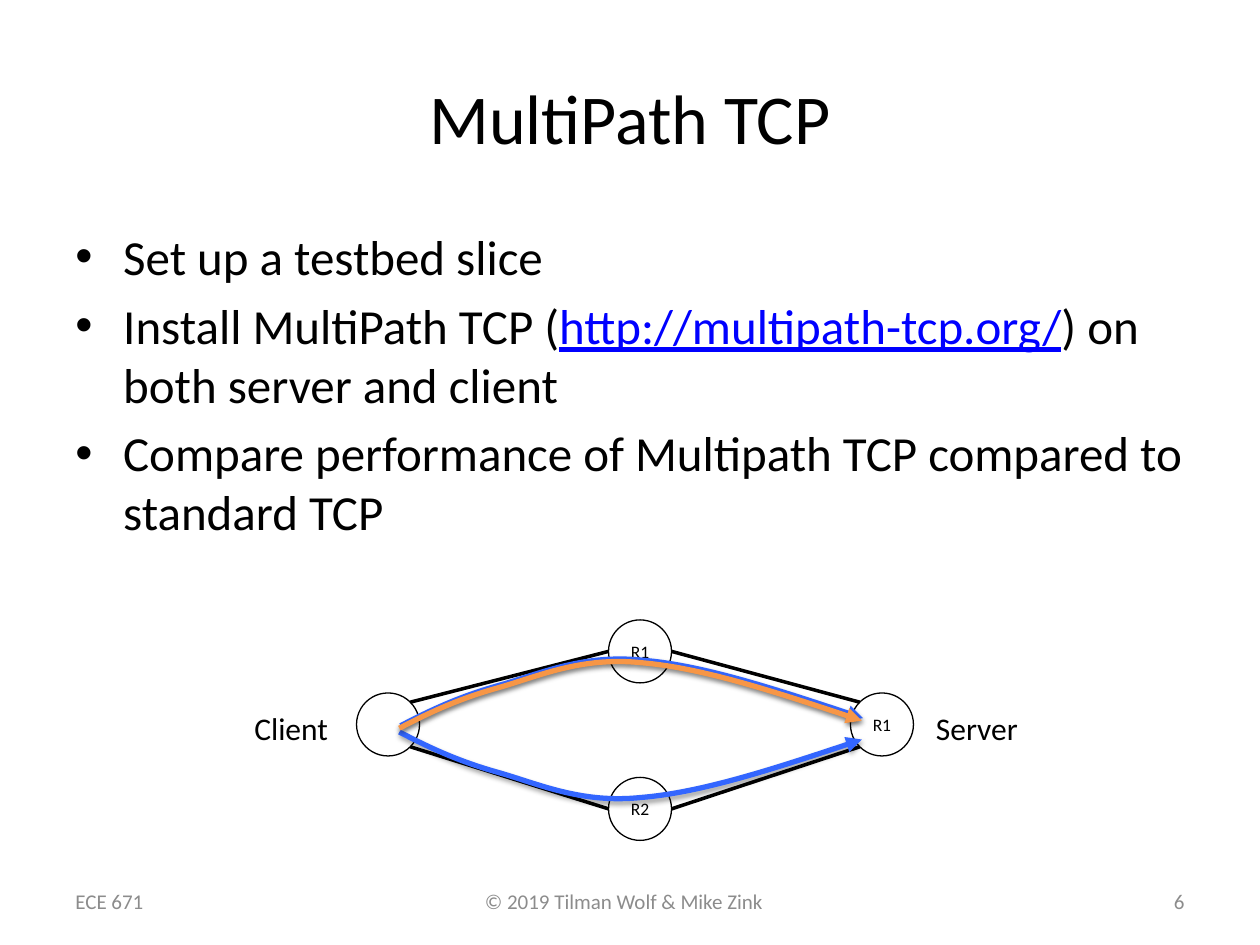
import math
from lxml import etree
from pptx import Presentation
from pptx.dml.color import RGBColor
from pptx.enum.shapes import MSO_CONNECTOR, MSO_SHAPE
from pptx.enum.text import MSO_ANCHOR, MSO_AUTO_SIZE, PP_ALIGN
from pptx.oxml.ns import qn
from pptx.util import Inches, Pt

LEFT, CENTER, RIGHT = PP_ALIGN.LEFT, PP_ALIGN.CENTER, PP_ALIGN.RIGHT
TOP, MIDDLE = MSO_ANCHOR.TOP, MSO_ANCHOR.MIDDLE
GROW = MSO_AUTO_SIZE.SHAPE_TO_FIT_TEXT
OVAL = MSO_SHAPE.OVAL
STRAIGHT = MSO_CONNECTOR.STRAIGHT

FONT = "Calibri"
COLORS = {"text": "000000", "muted": "8C8C8C", "link": "0000FF", "node": "FFFFFF",
          "blue": "3366FF", "orange": "F79646"}

TEXTS = [
    ("© 2019 Tilman Wolf & Mike Zink", (3.75, 7, 2.44, 0.5), 12, "muted", LEFT, TOP, False),
    ("MultiPath TCP", (0.5, 0.3, 9, 1.25), 40, "text", CENTER, MIDDLE, True),
    ("ECE 671", (0.5, 6.95, 2.33, 0.4), 12, "muted", LEFT, MIDDLE, True),
    ("6", (7.17, 6.95, 2.33, 0.4), 12, "muted", RIGHT, MIDDLE, True),
    ("Client", (1.92, 5.58, 0.8, 0.4), 18, "text", LEFT, TOP, False),
    ("Server", (7.33, 5.58, 0.86, 0.4), 18, "text", LEFT, TOP, False),
]
BODY_BOX = (0.5, 1.75, 9, 2.67)
BULLETS = [
    [("Set up a testbed slice", "text")],
    [("Install MultiPath TCP (", "text"), ("http://multipath-tcp.org/", "link"),
     (") on both server and client", "text")],
    [("Compare performance of Multipath TCP compared to standard TCP", "text")],
]
RADIUS = 0.25
NODES = {"client": (3.08, 5.75, ""), "upper": (5.08, 5.17, "R1"),
         "lower": (5.08, 6.42, "R2"), "server": (7, 5.75, "R1")}
LINKS = [("client", "upper"), ("client", "lower"), ("server", "upper"), ("server", "lower")]
CURVE = [(0.23, -0.12), (0.46, -0.23), (0.78, -0.32), (1.1, -0.41), (1.44, -0.57),
         (1.92, -0.52), (2.4, -0.48), (3.04, -0.27), (3.67, -0.06)]
FLOWS = [(3.18, 5.76, 1, "blue"), (3.17, 5.81, -1, "blue"), (3.17, 5.78, 1, "orange")]


def rgb(name):
    return RGBColor.from_string(COLORS[name])


def add_run(p, text, size, color):
    r = p.add_run()
    r.text = text
    for key, value in {"name": FONT, "size": Pt(size), "underline": color == "link"}.items():
        setattr(r.font, key, value)
    r.font.color.rgb = rgb(color)


def add_box(slide, box, anchor=TOP, wrap=True):
    tf = slide.shapes.add_textbox(*map(Inches, box)).text_frame
    tf.word_wrap, tf.vertical_anchor = wrap, anchor
    if not wrap:
        tf.auto_size = GROW
    return tf


def add_bullets(slide):
    tf = add_box(slide, BODY_BOX)
    for i, runs in enumerate(BULLETS):
        p = tf.add_paragraph() if i else tf.paragraphs[0]
        p.space_before = Pt(5.6)
        pPr = p._p.get_or_add_pPr()
        pPr.set("marL", str(Inches(0.38)))
        pPr.set("indent", str(-Inches(0.38)))
        etree.SubElement(pPr, qn("a:buFont"), typeface="Arial")
        etree.SubElement(pPr, qn("a:buChar"), char="•")
        for text, color in runs:
            add_run(p, text, 28, color)


def add_node(slide, x, y, label):
    s = slide.shapes.add_shape(OVAL, Inches(x - RADIUS), Inches(y - RADIUS),
                               Inches(2 * RADIUS), Inches(2 * RADIUS))
    s.shadow.inherit = False
    s.fill.solid()
    s.fill.fore_color.rgb = rgb("node")
    s.line.color.rgb, s.line.width = rgb("text"), Pt(0.75)
    if label:
        tf = s.text_frame
        tf.margin_left = tf.margin_right = 0
        tf.vertical_anchor = MIDDLE
        tf.paragraphs[0].alignment = CENTER
        add_run(tf.paragraphs[0], label, 10, "text")


def add_link(slide, end, router):
    (ex, ey, _), (rx, ry, _) = NODES[end], NODES[router]
    side = math.copysign(1, rx - ex)
    diagonal = RADIUS * math.sqrt(0.5)
    start = ex + side * diagonal, ey + math.copysign(diagonal, ry - ey)
    finish = rx - side * RADIUS, ry
    c = slide.shapes.add_connector(STRAIGHT, *map(Inches, start + finish))
    c.line.color.rgb, c.line.width = rgb("text"), Pt(2)
    etree.SubElement(c._element.spPr, qn("a:effectLst"))


def add_flow(slide, x, y, direction, color):
    fb = slide.shapes.build_freeform(Inches(x), Inches(y), scale=1.0)
    fb.add_line_segments([(Inches(x + dx), Inches(y + direction * dy)) for dx, dy in CURVE],
                         close=False)
    s = fb.convert_to_shape()
    s.fill.background()
    s.line.color.rgb, s.line.width = rgb(color), Pt(3)
    etree.SubElement(s.line._get_or_add_ln(), qn("a:tailEnd"), type="triangle")

    segments = list(s._element.iter(qn("a:lnTo")))
    outline = segments[0].getparent()
    for i in range(0, len(segments), 3):
        bezier = etree.SubElement(outline, qn("a:cubicBezTo"))
        for segment in segments[i:i + 3]:
            bezier.append(segment[0])
            outline.remove(segment)

    effects = etree.SubElement(s._element.spPr, qn("a:effectLst"))
    shadow = etree.SubElement(effects, qn("a:outerShdw"), blurRad=str(Pt(3.1)),
                              dist=str(Pt(1.6)), dir="5400000", rotWithShape="0")
    shade = etree.SubElement(shadow, qn("a:srgbClr"), val=COLORS["text"])
    etree.SubElement(shade, qn("a:alpha"), val="38000")


def main():
    prs = Presentation()
    prs.slide_width, prs.slide_height = Inches(10), Inches(7.5)
    slide = prs.slides.add_slide(prs.slide_layouts[6])
    for text, box, size, color, align, anchor, wrap in TEXTS:
        p = add_box(slide, box, anchor, wrap).paragraphs[0]
        p.alignment = align
        add_run(p, text, size, color)
    add_bullets(slide)
    for node in NODES.values():
        add_node(slide, *node)
    for link in LINKS:
        add_link(slide, *link)
    for flow in FLOWS:
        add_flow(slide, *flow)
    prs.save("out.pptx")


if __name__ == "__main__":
    main()
